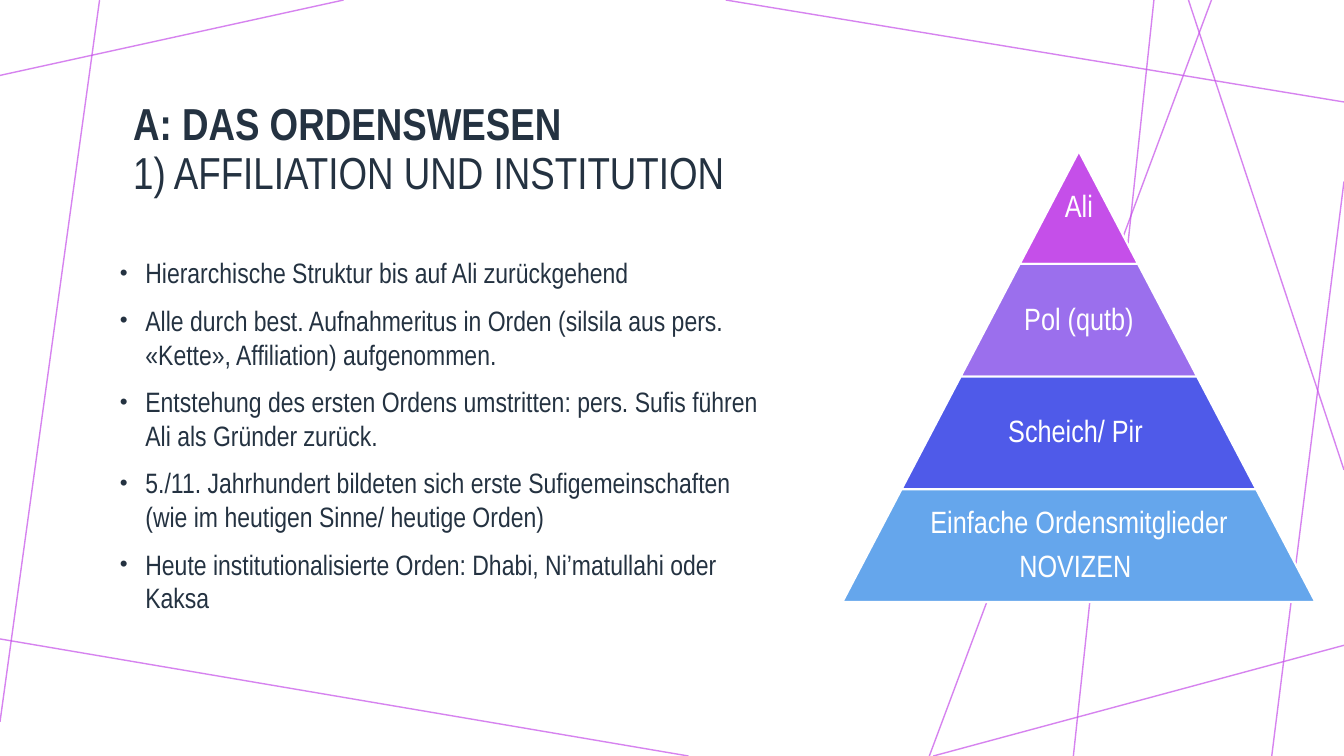
"""Build the slide on the structure of Sufi orders with its hierarchy pyramid."""
from dataclasses import dataclass
from typing import Any

import lxml.etree
import pptx
import pptx.dml.color
import pptx.enum.shapes
import pptx.enum.text
import pptx.oxml.ns
import pptx.util

Cm = pptx.util.Cm
Pt = pptx.util.Pt
qn = pptx.oxml.ns.qn
Anchor = pptx.enum.text.MSO_ANCHOR
Align = pptx.enum.text.PP_ALIGN

SLIDE_WIDTH, SLIDE_HEIGHT = 33.87, 19.05
TYPEFACE = "Arial Narrow"
INK, WHITE, MAGENTA = "243241", "FFFFFF", "C54FE9"
APEX_X, APEX_Y = 27.19, 3.81
LEVEL_HEIGHT, WIDTH_STEP = 2.84, 2.98


@dataclass
class Line:
    x1: float
    y1: float
    x2: float
    y2: float


@dataclass
class Level:
    color: str
    lines: list[str]


LINES = [
    Line(8.66, 0, 0, 1.9),
    Line(2.51, 0, 0, 18.19),
    Line(17.35, SLIDE_HEIGHT, 0, 16.1),
    Line(SLIDE_WIDTH, 16.26, 23.52, SLIDE_HEIGHT),
    Line(SLIDE_WIDTH, 4.57, 32.05, SLIDE_HEIGHT),
    Line(SLIDE_WIDTH, 11.84, 29.95, 0),
    Line(SLIDE_WIDTH, 2.57, 18.29, 0),
    Line(23.42, SLIDE_HEIGHT, 30.53, 0),
    Line(27.05, SLIDE_HEIGHT, 29.08, 0),
]
LEVELS = [
    Level(MAGENTA, ["Ali"]),
    Level("9B6FED", ["Pol (qutb)"]),
    Level("4F5AE9", ["Scheich/ Pir "]),
    Level("65A6EC", ["Einfache Ordensmitglieder", "NOVIZEN "]),
]
BULLETS = [
    "Hierarchische Struktur bis auf Ali zurückgehend",
    "Alle durch best. Aufnahmeritus in Orden (silsila aus pers. «Kette», Affiliation) aufgenommen.",
    "Entstehung des ersten Ordens umstritten: pers. Sufis führen Ali als Gründer zurück.",
    "5./11. Jahrhundert bildeten sich erste Sufigemeinschaften (wie im heutigen Sinne/ heutige Orden)",
    "Heute institutionalisierte Orden: Dhabi, Ni’matullahi oder Kaksa",
]


def apply(target: Any, values: dict[str, Any]) -> None:
    """Set every attribute named in values."""
    for name, value in values.items():
        setattr(target, name, value)


def place(shape: Any, left: float, top: float, width: float, height: float) -> None:
    """Move and size a shape in centimetres."""
    apply(shape, {"left": Cm(left), "top": Cm(top), "width": Cm(width), "height": Cm(height)})


def paint(color_format: Any, color: str) -> None:
    """Apply a hex colour."""
    color_format.rgb = pptx.dml.color.RGBColor.from_string(color)


def add_run(paragraph: Any, text: str, size: float, color: str, bold: bool = False) -> None:
    """Append formatted text."""
    run = paragraph.add_run()
    run.text = text
    apply(run.font, {"name": TYPEFACE, "size": Pt(size), "bold": bold})
    paint(run.font.color, color)


def paragraphs_for(text_frame: Any, count: int) -> list[Any]:
    """Return the first paragraph followed by new ones."""
    return [text_frame.paragraphs[0]] + [text_frame.add_paragraph() for _ in range(count - 1)]


def add_line(slide: Any, line: Line) -> None:
    """Draw a translucent decorative line."""
    connector = slide.shapes.add_connector(
        pptx.enum.shapes.MSO_CONNECTOR.STRAIGHT,
        Cm(line.x1), Cm(line.y1), Cm(line.x2), Cm(line.y2),
    )
    connector.line.width = Pt(1)
    paint(connector.line.color, MAGENTA)
    properties = connector._element.spPr
    color = properties.find(".//" + qn("a:srgbClr"))
    lxml.etree.SubElement(color, qn("a:alpha"), val="70000")
    lxml.etree.SubElement(properties, qn("a:effectLst"))


def fill_title(title: Any) -> None:
    """Place and write the two-line title."""
    place(title, 3.1, 1.47, 15.75, 4.65)
    apply(title.text_frame, {
        "vertical_anchor": Anchor.MIDDLE,
        "word_wrap": True,
        "auto_size": pptx.enum.text.MSO_AUTO_SIZE.NONE,
    })
    paragraph = title.text_frame.paragraphs[0]
    apply(paragraph, {"alignment": Align.LEFT, "line_spacing": 0.9})
    add_run(paragraph, "A: DAS ORDENSWESEN", 32, INK, True)
    paragraph.add_line_break()
    add_run(paragraph, "1) AFFILIATION UND INSTITUTION", 32, INK)


def fill_body(body: Any) -> None:
    """Place and write the bullet list."""
    place(body, 2.77, 6.32, 16.76, 9.98)
    apply(body.text_frame, {
        "vertical_anchor": Anchor.TOP,
        "word_wrap": True,
        "auto_size": pptx.enum.text.MSO_AUTO_SIZE.NONE,
    })
    for index, paragraph in enumerate(paragraphs_for(body.text_frame, len(BULLETS))):
        properties = paragraph._p.get_or_add_pPr()
        properties.set("marL", str(Cm(0.64)))
        properties.set("indent", str(-Cm(0.64)))
        lxml.etree.SubElement(properties, qn("a:buSzPct"), val="80000")
        lxml.etree.SubElement(properties, qn("a:buFont"), typeface="Arial")
        lxml.etree.SubElement(properties, qn("a:buChar"), char="•")
        apply(paragraph, {"space_before": Pt(10 if index else 0), "alignment": Align.LEFT})
        add_run(paragraph, BULLETS[index], 20, INK)


def add_level(slide: Any, index: int, level: Level) -> None:
    """Draw one pyramid level and its label."""
    width = WIDTH_STEP * (index + 1)
    top = APEX_Y + LEVEL_HEIGHT * index
    trapezoid = slide.shapes.add_shape(pptx.enum.shapes.MSO_SHAPE.TRAPEZOID, 0, 0, 0, 0)
    place(trapezoid, APEX_X - width / 2, top, width, LEVEL_HEIGHT)
    trapezoid.adjustments[0] = WIDTH_STEP / 2 / LEVEL_HEIGHT
    trapezoid.shadow.inherit = False
    trapezoid.fill.solid()
    paint(trapezoid.fill.fore_color, level.color)
    paint(trapezoid.line.color, WHITE)
    trapezoid.line.width = Pt(1.5)

    label_width = max(WIDTH_STEP, width * 0.65)
    label = slide.shapes.add_textbox(0, 0, 0, 0)
    place(label, APEX_X - label_width / 2, top, label_width, LEVEL_HEIGHT)
    margins = {f"margin_{side}": Cm(0.08) for side in ("left", "top", "right", "bottom")}
    apply(label.text_frame, {"word_wrap": True, "vertical_anchor": Anchor.MIDDLE, **margins})
    for paragraph, text in zip(paragraphs_for(label.text_frame, len(level.lines)), level.lines):
        apply(paragraph, {"alignment": Align.CENTER, "line_spacing": 0.9, "space_after": Pt(7.7)})
        add_run(paragraph, text, 22, WHITE)


def main() -> None:
    """Assemble and save the presentation."""
    presentation = pptx.Presentation()
    apply(presentation, {"slide_width": Cm(SLIDE_WIDTH), "slide_height": Cm(SLIDE_HEIGHT)})
    slide = presentation.slides.add_slide(presentation.slide_layouts[1])
    fill_title(slide.shapes.title)
    fill_body(slide.placeholders[1])
    for line in LINES:
        add_line(slide, line)
    for index, level in enumerate(LEVELS):
        add_level(slide, index, level)
    presentation.save("out.pptx")


if __name__ == "__main__":
    main()
